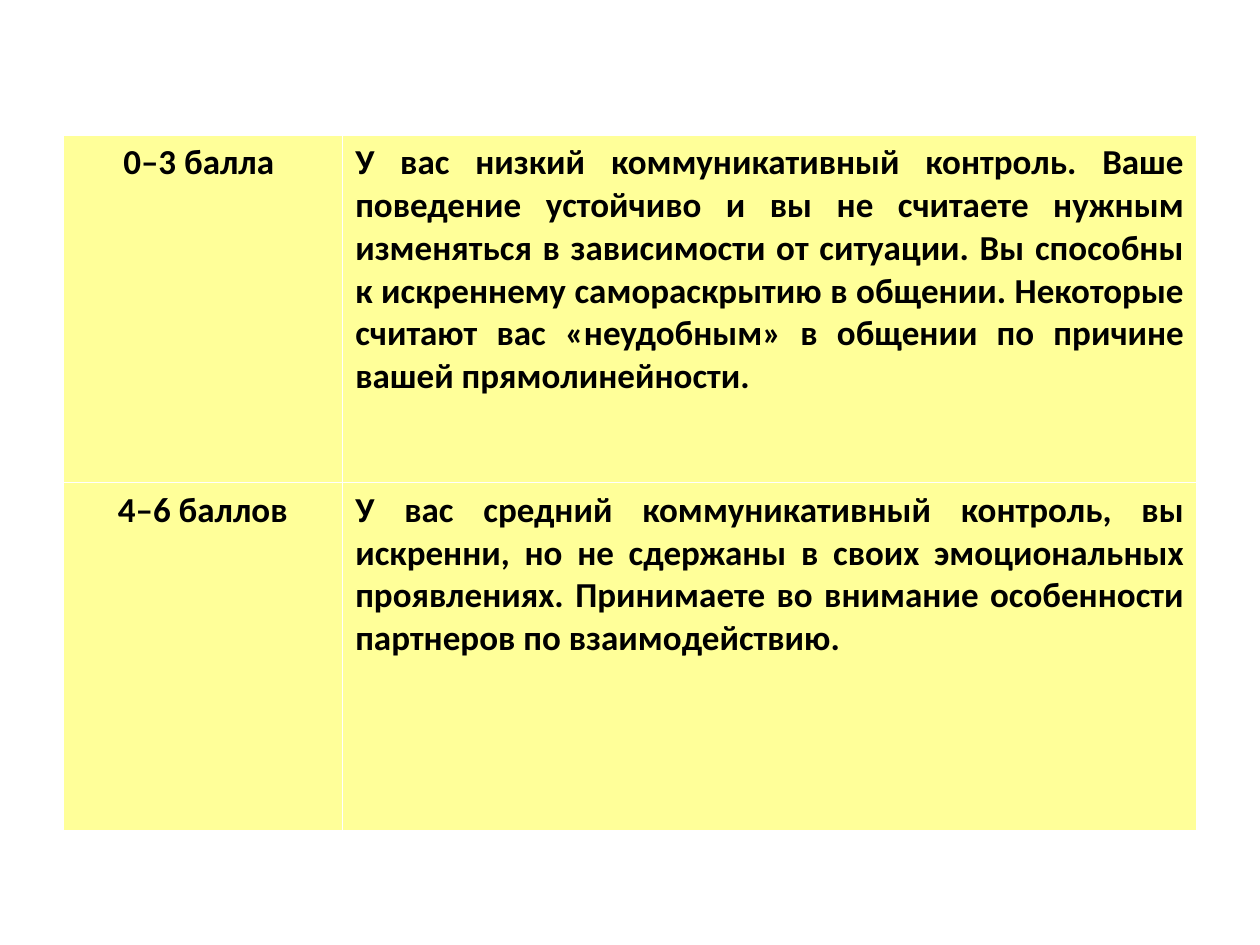
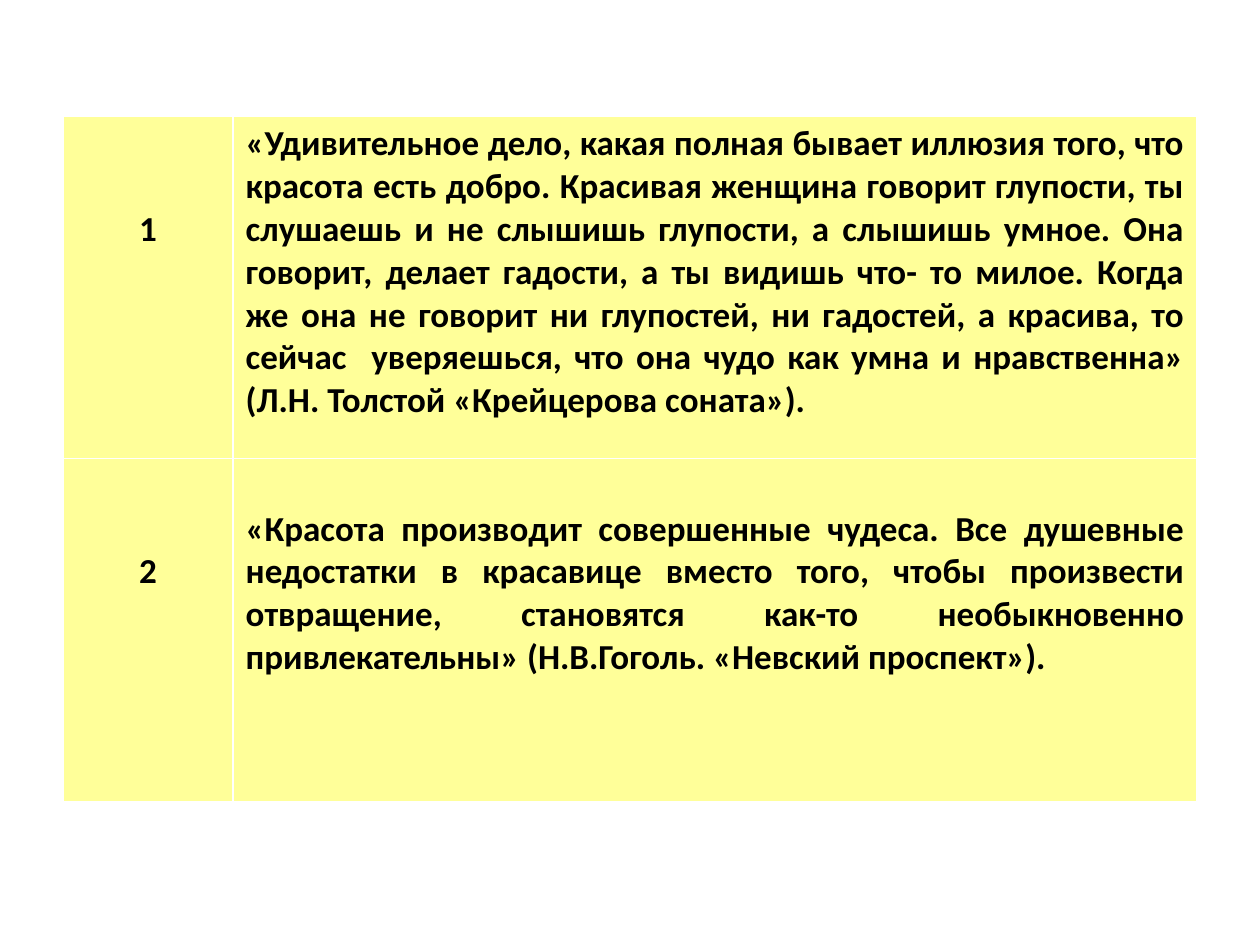
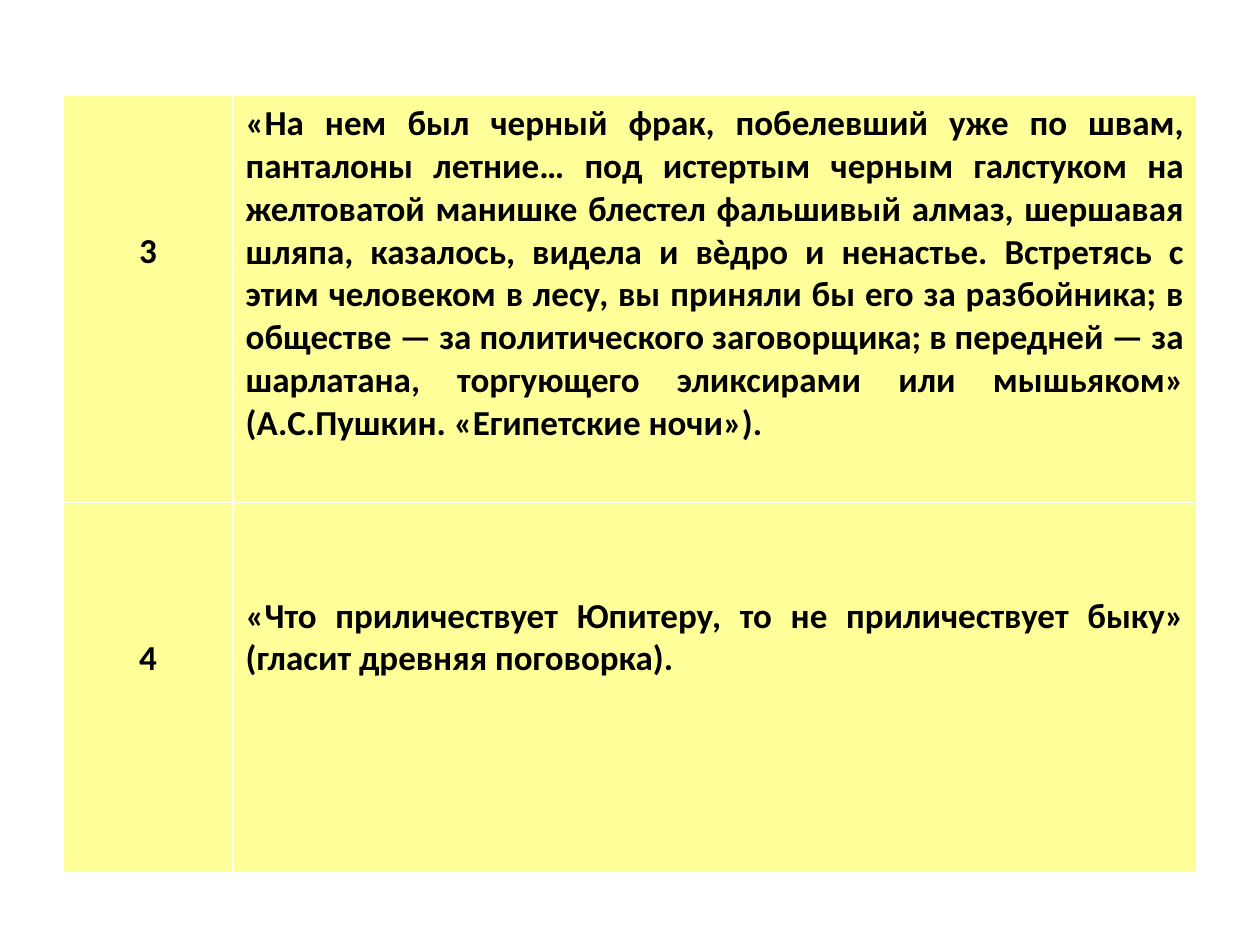
from pptx import Presentation
from pptx.dml.color import RGBColor
from pptx.enum.text import PP_ALIGN
from pptx.util import Inches, Pt

SLIDE_WIDTH, SLIDE_HEIGHT = 10, 7.5
SIDE_MARGIN = SLIDE_WIDTH * 0.05
TABLE_WIDTH = SLIDE_WIDTH - 2 * SIDE_MARGIN
CELL_FILL, TEXT_COLOUR = "FFFF99", "000000"
FONT_NAME, FONT_SIZE = "Calibri", 20
CELL_PADDING, LINE_HEIGHT = 0.05, 0.34
COLUMN_ALIGNMENTS = (PP_ALIGN.CENTER, PP_ALIGN.JUSTIFY)


def colour(hex_value):
    return RGBColor.from_string(hex_value)


# Each cell holds its text and the number of lines it is lowered by.
PAGES = [
    {
        "top": 1.07, "label_width": 2.22, "row_heights": (2.76, 2.76),
        "rows": [
            (("0–3 балла ", 0),
             ("У вас низкий коммуникативный контроль. Ваше поведение устойчиво и вы "
              "не считаете нужным изменяться в зависимости от ситуации. Вы способны "
              "к искреннему самораскрытию в общении. Некоторые считают вас "
              "«неудобным» в общении по причине вашей прямолинейности. ", 0)),
            (("4–6 баллов", 0),
             ("У вас средний коммуникативный контроль, вы искренни, но не сдержаны "
              "в своих эмоциональных проявлениях. Принимаете во внимание "
              "особенности партнеров по взаимодействию. ", 0)),
        ],
    },
    {
        "top": 0.92, "label_width": 1.35, "row_heights": (2.72, 2.72),
        "rows": [
            (("1", 2),
             ("«Удивительное дело, какая полная бывает иллюзия того, что красота "
              "есть добро. Красивая женщина говорит глупости, ты слушаешь и не "
              "слышишь глупости, а слышишь умное. Она говорит, делает гадости, а ты "
              "видишь что- то милое. Когда же она не говорит ни глупостей, ни "
              "гадостей, а красива, то сейчас  уверяешься, что она чудо как умна и "
              "нравственна» (Л.Н. Толстой «Крейцерова соната»). ", 0)),
            (("2", 2),
             ("«Красота производит совершенные чудеса. Все душевные недостатки в "
              "красавице вместо того, чтобы произвести отвращение, становятся "
              "как-то необыкновенно привлекательны» (Н.В.Гоголь. «Невский "
              "проспект»).", 1)),
        ],
    },
    {
        "top": 0.76, "label_width": 1.35, "row_heights": (3.23, 2.94),
        "rows": [
            (("3", 3),
             ("«На нем был черный фрак, побелевший уже по швам, панталоны летние… "
              "под истертым черным галстуком на желтоватой манишке блестел "
              "фальшивый алмаз, шершавая шляпа, казалось, видела и вѐдро и "
              "ненастье. Встретясь с этим человеком в лесу, вы приняли бы его за "
              "разбойника; в обществе — за политического заговорщика; в передней — "
              "за шарлатана, торгующего эликсирами или мышьяком» (А.С.Пушкин. "
              "«Египетские ночи»). ", 0)),
            (("4", 3),
             ("«Что приличествует Юпитеру, то не приличествует быку» (гласит "
              "древняя поговорка). ", 2)),
        ],
    },
]

deck = Presentation()
deck.slide_width, deck.slide_height = Inches(SLIDE_WIDTH), Inches(SLIDE_HEIGHT)
blank_layout = deck.slide_layouts[6]

for content in PAGES:
    page = deck.slides.add_slide(blank_layout)
    table = page.shapes.add_table(
        len(content["rows"]), 2, Inches(SIDE_MARGIN), Inches(content["top"]),
        Inches(TABLE_WIDTH), Inches(sum(content["row_heights"]))).table
    table.horz_banding = False
    table.columns[0].width = Inches(content["label_width"])
    table.columns[1].width = Inches(TABLE_WIDTH - content["label_width"])

    for row_index, row_cells in enumerate(content["rows"]):
        table.rows[row_index].height = Inches(content["row_heights"][row_index])
        for column_index, (text, lines_down) in enumerate(row_cells):
            cell = table.cell(row_index, column_index)
            cell.fill.solid()
            cell.fill.fore_color.rgb = colour(CELL_FILL)
            cell.margin_top = Inches(CELL_PADDING + lines_down * LINE_HEIGHT)
            para = cell.text_frame.paragraphs[0]
            para.alignment = COLUMN_ALIGNMENTS[column_index]
            span = para.add_run()
            span.text = text
            span.font.name = FONT_NAME
            span.font.size = Pt(FONT_SIZE)
            span.font.bold = True
            span.font.color.rgb = colour(TEXT_COLOUR)

deck.save("out.pptx")
